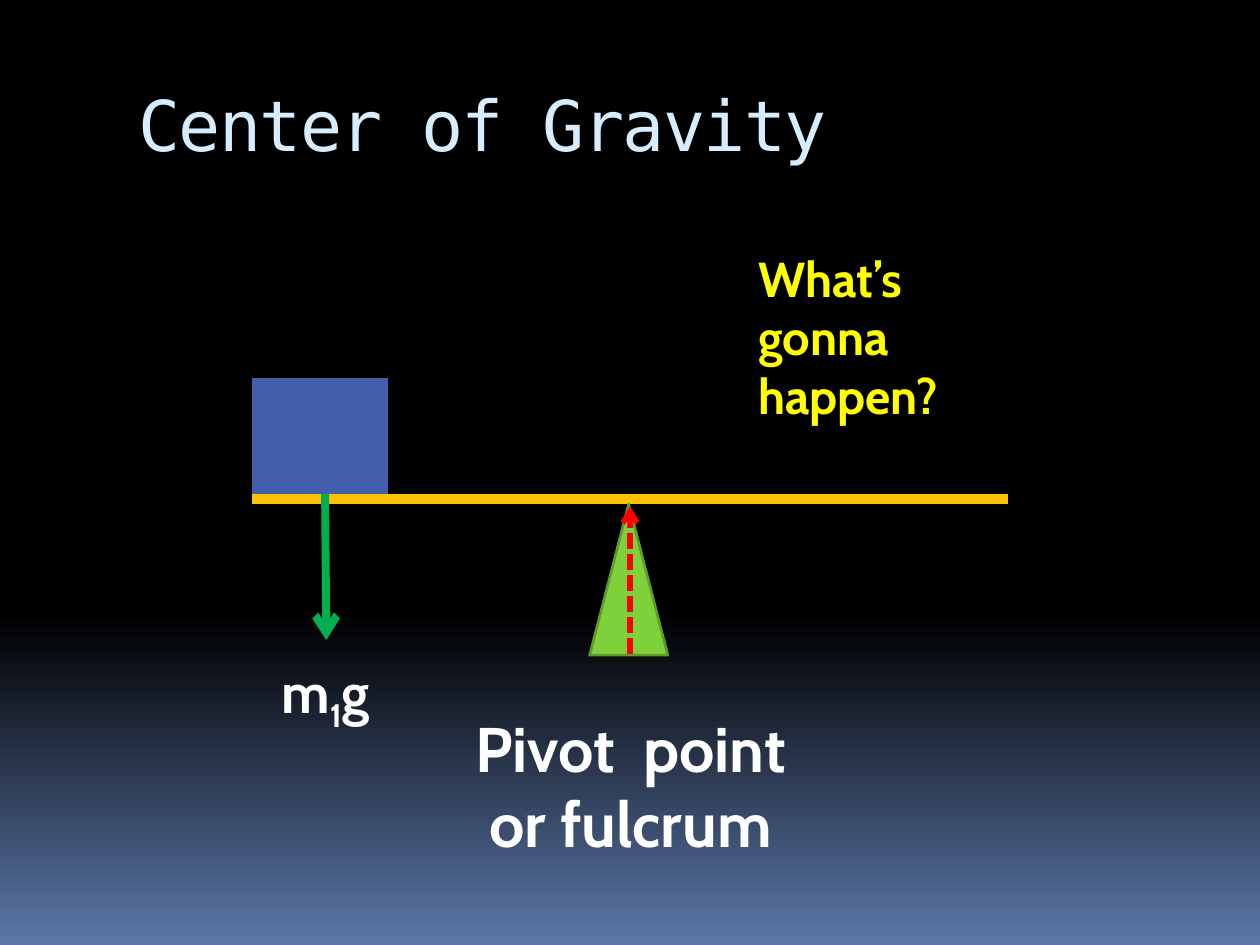
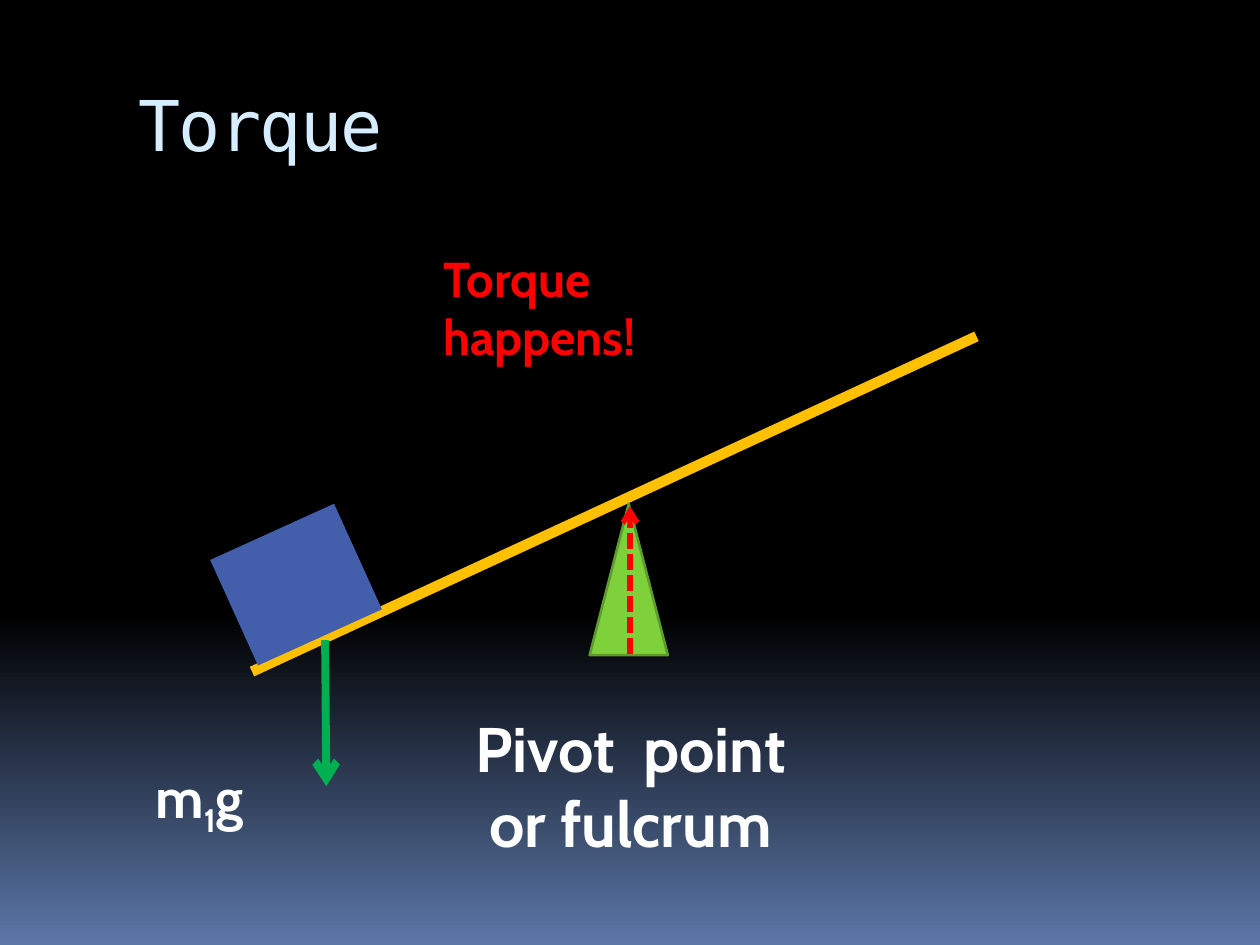
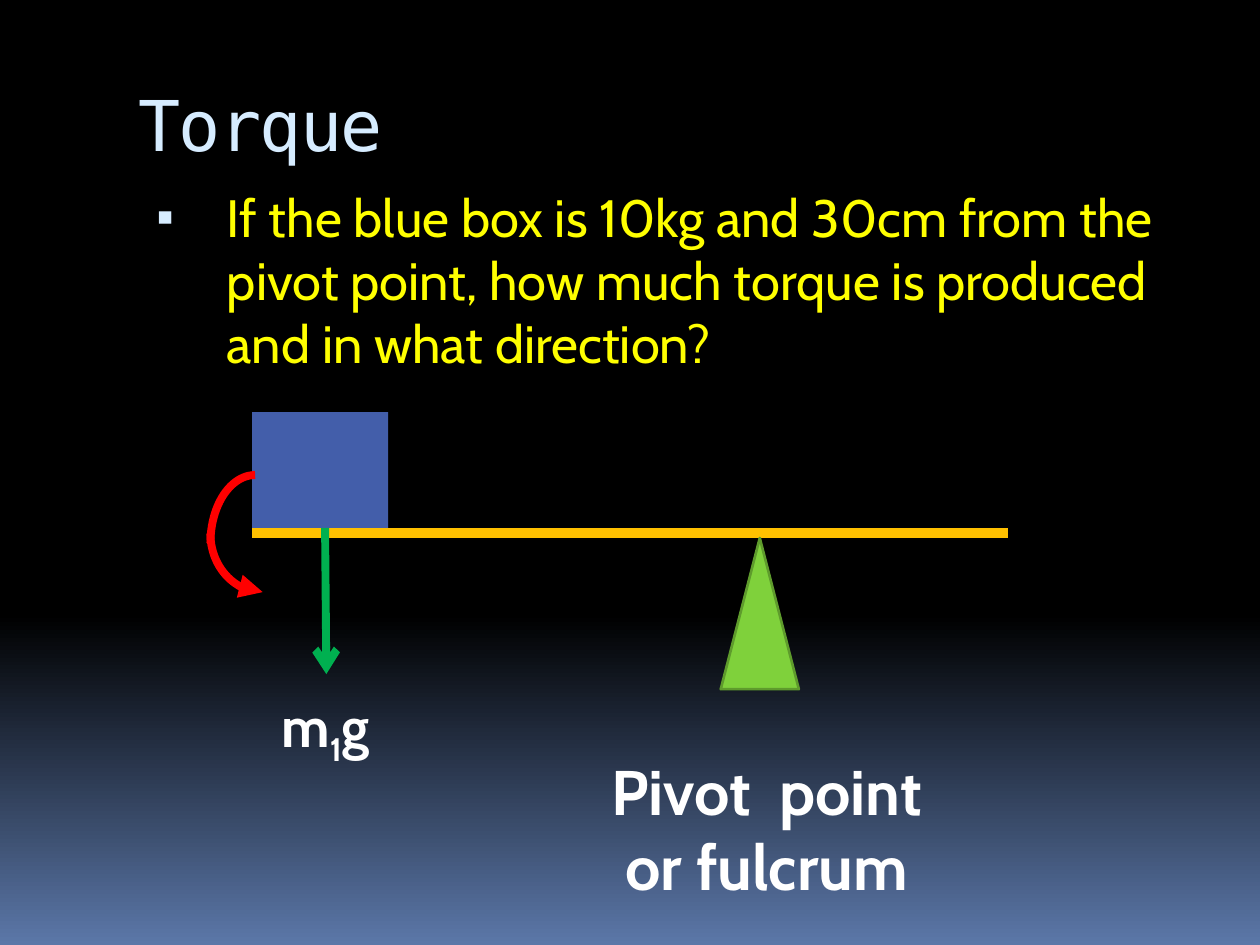
from copy import deepcopy
from dataclasses import dataclass
from typing import Optional

from lxml import etree
from pptx import Presentation
from pptx.dml.color import RGBColor
from pptx.enum import dml, shapes as kinds, text
from pptx.oxml import ns
from pptx.util import Inches, Pt

COLORS = {
    "black": "000000",
    "horizon": "5B77A8",
    "title": "D6ECFF",
    "white": "FFFFFF",
    "yellow": "FFFF00",
    "red": "FF0000",
    "beam": "FFC000",
    "box": "435EAA",
    "weight": "00B050",
    "pivot": "7FD13B",
    "pivot_edge": "5E9B2C",
}
BODY_FONT = "Cabin"
TITLE_FONT = "DejaVu Sans Mono"
LEFT, CENTER = text.PP_ALIGN.LEFT, text.PP_ALIGN.CENTER
Point = tuple[float, float]


@dataclass
class Stroke:
    color: str
    width: float
    arrow: Optional[str] = None
    dash: Optional[dml.MSO_LINE] = None


@dataclass
class Label:
    words: tuple[str, ...]
    at: Point
    size: tuple[float, float]
    points: int
    color: str = "white"
    align: text.PP_ALIGN = CENTER


@dataclass
class Lever:
    beam: tuple[Point, Point]
    box: Point
    weight_top: float
    weight_label: Point
    apex: Point
    pivot_label: Point
    tilt: float = 0
    reaction: bool = True


BEAM = Stroke("beam", 6)
WEIGHT = Stroke("weight", 4.5, "arrow")
REACTION = Stroke("red", 3, "arrow", dml.MSO_LINE.SQUARE_DOT)
TURN = Stroke("red", 4.5)
TURN_HEAD = Stroke("red", 4.5, "triangle")


# Formatting helpers
def rgb(name: str) -> RGBColor:
    return RGBColor.from_string(COLORS[name])


def add_xml(parent, tag: str, **attributes: str):
    return etree.SubElement(parent, ns.qn(tag), attributes)


def style(paragraph, font: str, points: int, color: str, bold: bool = False) -> None:
    paragraph.font.name = font
    paragraph.font.size = Pt(points)
    paragraph.font.bold = bold
    paragraph.font.color.rgb = rgb(color)


def apply_stroke(line, stroke: Stroke) -> None:
    line.color.rgb = rgb(stroke.color)
    line.width = Pt(stroke.width)
    if stroke.dash:
        line.dash_style = stroke.dash
    if stroke.arrow:
        add_xml(line._get_or_add_ln(), "a:tailEnd", type=stroke.arrow)


def place(shape, left: float, top: float, width: float, height: float) -> None:
    shape.left, shape.top = Inches(left), Inches(top)
    shape.width, shape.height = Inches(width), Inches(height)


# Drawing helpers
def add_line(shapes, start: Point, end: Point, stroke: Stroke) -> None:
    ends = [Inches(value) for value in (*start, *end)]
    line = shapes.add_connector(kinds.MSO_CONNECTOR.STRAIGHT, *ends)
    apply_stroke(line.line, stroke)
    add_xml(line._element.spPr, "a:effectLst")


def add_solid(shapes, kind, at: Point, size: Point, fill: str):
    solid = shapes.add_shape(kind, *[Inches(value) for value in (*at, *size)])
    solid.shadow.inherit = False
    solid.fill.solid()
    solid.fill.fore_color.rgb = rgb(fill)
    solid.line.fill.background()
    return solid


def add_arc(shapes, at: Point, size: Point, stroke: Stroke, turn: float = 0) -> None:
    arc = add_solid(shapes, kinds.MSO_SHAPE.ARC, at, size, stroke.color)
    arc.fill.background()
    apply_stroke(arc.line, stroke)
    arc.rotation = turn
    arc._element.spPr.get_or_add_xfrm().set("flipH", "1")


def add_label(shapes, label: Label) -> None:
    """Draw a bold label; the second of several parts is a subscript."""
    frame = shapes.add_textbox(
        *[Inches(value) for value in (*label.at, *label.size)]).text_frame
    frame.word_wrap = True
    frame.auto_size = text.MSO_AUTO_SIZE.SHAPE_TO_FIT_TEXT
    paragraph = frame.paragraphs[0]
    paragraph.alignment = label.align
    style(paragraph, BODY_FONT, label.points, label.color, bold=True)
    for index, words in enumerate(label.words):
        run = paragraph.add_run()
        run.text = words
        if index == 1:
            run._r.get_or_add_rPr().set("baseline", "-25000")


def add_lever(shapes, lever: Lever) -> None:
    add_line(shapes, *lever.beam, BEAM)
    box = add_solid(shapes, kinds.MSO_SHAPE.RECTANGLE, lever.box, (1.08, 0.92), "box")
    box.rotation = lever.tilt
    add_label(shapes, Label(("Pivot  point or fulcrum",), lever.pivot_label,
                            (3.17, 1.31), 36))
    add_line(shapes, (2.58, lever.weight_top), (2.59, lever.weight_top + 1.16), WEIGHT)
    add_label(shapes, Label(("m", "1", "g"), lever.weight_label, (1.33, 0.64), 32))
    x, y = lever.apex
    pivot = add_solid(shapes, kinds.MSO_SHAPE.ISOSCELES_TRIANGLE,
                      (x - 0.31, y), (0.62, 1.2), "pivot")
    apply_stroke(pivot.line, Stroke("pivot_edge", 1.5))
    if lever.reaction:
        add_line(shapes, (5, y + 1.19), (5, y + 0.02), REACTION)


def level_lever(drop: float, apex_x: float, pivot_label: Point, reaction: bool) -> Lever:
    beam_y = 3.96 + drop
    return Lever(((2, beam_y), (8, beam_y)), (2, 3 + drop), 3.92 + drop,
                 (1.92, 5.17 + drop), (apex_x, 4 + drop), pivot_label,
                 reaction=reaction)


# Shared background and title
def paint_background(master) -> None:
    fill = master.background.fill
    fill.gradient()
    fill.gradient_angle = 270
    stop_list = master.element.xpath(".//p:bg//a:gsLst")[0]
    stop_list.append(deepcopy(stop_list[-1]))
    stops = ((0, "black"), (0.65, "black"), (1, "horizon"))
    for stop, (position, color) in zip(fill.gradient_stops, stops):
        stop.position = position
        stop.color.rgb = rgb(color)


def add_slide(deck, title: str, layout: int = 5):
    slide = deck.slides.add_slide(deck.slide_layouts[layout])
    heading = slide.shapes.title
    place(heading, 1, 0.56, 8.5, 1)
    frame = heading.text_frame
    frame.text = title
    frame.vertical_anchor = text.MSO_ANCHOR.TOP
    frame.margin_top = Inches(0.09)
    frame.auto_size = text.MSO_AUTO_SIZE.NONE
    paragraph = frame.paragraphs[0]
    paragraph.alignment = LEFT
    style(paragraph, TITLE_FONT, 40, "title")
    paragraph.runs[0]._r.get_or_add_rPr().set("spc", "-100")
    return slide


def fill_question(body, question: str) -> None:
    place(body, 1, 1.42, 8.5, 5.53)
    frame = body.text_frame
    frame.text = question
    frame.auto_size = text.MSO_AUTO_SIZE.NONE
    paragraph = frame.paragraphs[0]
    paragraph.space_before = Pt(7)
    properties = paragraph._p.get_or_add_pPr()
    properties.set("marL", str(Inches(0.7)))
    properties.set("indent", str(Inches(-0.56)))
    add_xml(add_xml(properties, "a:buClr"), "a:srgbClr", val=COLORS["title"])
    add_xml(properties, "a:buSzPct", val="95000")
    add_xml(properties, "a:buChar", char="▪")
    style(paragraph, BODY_FONT, 30, "yellow")


def main() -> None:
    deck = Presentation()
    deck.slide_width, deck.slide_height = Inches(10), Inches(7.5)
    paint_background(deck.slide_master)

    # Balanced beam
    gravity = add_slide(deck, "Center of Gravity").shapes
    add_lever(gravity, level_lever(0, 4.99, (3.42, 5.58), reaction=True))
    add_label(gravity, Label(("What’s gonna happen?",), (5.92, 1.92), (2.25, 1.51),
                             28, "yellow", LEFT))

    # Tilted beam
    torque = add_slide(deck, "Torque").shapes
    add_lever(torque, Lever(((2, 5.33), (7.75, 2.67)), (1.81, 4.18), 5.08,
                            (0.92, 6), (4.99, 4), (3.42, 5.58), tilt=335.6))
    add_label(torque, Label(("Torque happens!",), (3.42, 1.92), (2.25, 1.04),
                            28, "red", LEFT))

    # Torque problem
    problem = add_slide(deck, "Torque", layout=1)
    fill_question(problem.placeholders[1],
                  "If the blue box is 10kg and 30cm from the pivot point, "
                  "how much torque is produced and in what direction?")
    diagram = problem.shapes.add_group_shape().shapes
    add_lever(diagram, level_lever(0.27, 6.03, (4.5, 5.92), reaction=False))
    add_arc(diagram, (1.62, 3.82), (0.93, 0.83), TURN_HEAD, turn=270)
    add_arc(diagram, (1.67, 3.77), (0.71, 1.08), TURN)

    deck.save("out.pptx")


if __name__ == "__main__":
    main()
